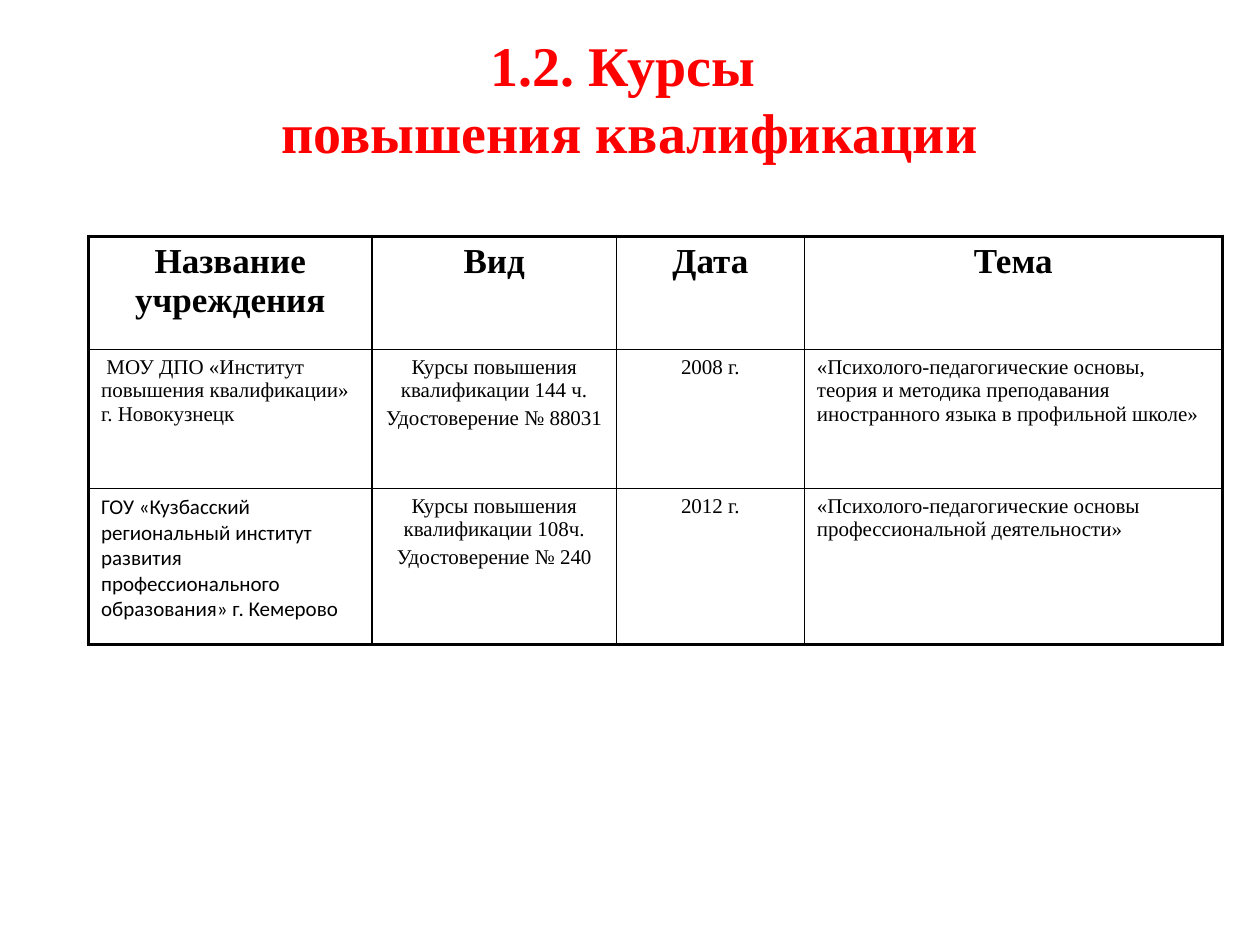
from lxml.etree import SubElement
from pptx import Presentation
from pptx.dml.color import RGBColor
from pptx.enum.text import MSO_ANCHOR as ANCHOR, PP_ALIGN as ALIGN
from pptx.oxml import parse_xml
from pptx.oxml.ns import nsdecls, qn
from pptx.util import Pt

SERIF, SANS = "Times New Roman", "Calibri"
BLACK, RED = "000000", "FF0000"
THIN, THICK = 1, 2.25

HEADERS = ["Название учреждения", "Вид", "Дата", "Тема"]
COURSES = [
    [" МОУ ДПО «Институт повышения квалификации» г. Новокузнецк",
     "Курсы повышения квалификации 144 ч.\nУдостоверение № 88031",
     "2008 г.",
     "«Психолого-педагогические основы, теория и методика преподавания "
     "иностранного языка в профильной школе»"],
    ["ГОУ «Кузбасский региональный институт развития профессионального "
     "образования» г. Кемерово",
     "Курсы повышения квалификации 108ч.\nУдостоверение № 240",
     "2012 г.",
     "«Психолого-педагогические основы профессиональной деятельности»"],
]
COLUMN_WIDTHS = [162, 139.7, 107.3, 239]
ROW_HEIGHTS = [64.8, 79.2, 89.3]


def color(value):
    return RGBColor.from_string(value)


class SlideBuilder:
    def __init__(self, slide):
        self.s = slide

    def format_text(self, tf, size, font=SERIF, fill=BLACK, bold=False, align=ALIGN.CENTER):
        for i, p in enumerate(tf.paragraphs):
            p.alignment = align
            if i:
                p.space_before = Pt(size * 0.2)
            for r in p.runs:
                r.font.name = font
                r.font.size = Pt(size)
                r.font.bold = bold
                r.font.color.rgb = color(fill)

    def title(self, text, x, y, w, h):
        tf = self.s.shapes.add_textbox(Pt(x), Pt(y), Pt(w), Pt(h)).text_frame
        tf.word_wrap = True
        tf.vertical_anchor = ANCHOR.MIDDLE
        tf.text = text
        self.format_text(tf, 32, fill=RED, bold=True)

    def borders(self, cell, widths):
        """Draw the left, right, top and bottom lines, in that order."""
        tc_pr = cell._tc.get_or_add_tcPr()
        for i, (side, width) in enumerate(zip("LRTB", widths)):
            ln = parse_xml(f'<a:ln{side} {nsdecls("a")} w="{Pt(width)}"/>')
            solid = SubElement(ln, qn("a:solidFill"))
            SubElement(solid, qn("a:srgbClr"), val=BLACK)
            tc_pr.insert(i, ln)

    def table(self, rows, x, y, widths, heights):
        table = self.s.shapes.add_table(len(rows), len(widths), Pt(x), Pt(y),
                                        Pt(sum(widths)), Pt(sum(heights))).table
        table.first_row = table.horz_banding = False
        for column, width in zip(table.columns, widths):
            column.width = Pt(width)
        for row, height in zip(table.rows, heights):
            row.height = Pt(height)

        last_row, last_col = len(rows) - 1, len(widths) - 1
        for i, texts in enumerate(rows):
            for j, text in enumerate(texts):
                cell = table.cell(i, j)
                cell.text = text
                cell.fill.background()
                outer = (j == 0, j == last_col, i == 0, i == last_row)
                self.borders(cell, [THICK if edge else THIN for edge in outer])
                if i == 0:
                    self.format_text(cell.text_frame, 20, bold=True)
                else:
                    align = ALIGN.LEFT if j in (0, last_col) else ALIGN.CENTER
                    font = SANS if (i, j) == (last_row, 0) else SERIF
                    self.format_text(cell.text_frame, 12, font, align=align)


def main():
    prs = Presentation()
    prs.slide_width, prs.slide_height = Pt(720), Pt(540)
    builder = SlideBuilder(prs.slides.add_slide(prs.slide_layouts[6]))
    builder.table([HEADERS, *COURSES], 50.6, 135, COLUMN_WIDTHS, ROW_HEIGHTS)
    builder.title("1.2. Курсы \vповышения квалификации", 36, 21.6, 648, 68.4)
    prs.save("out.pptx")


if __name__ == "__main__":
    main()
